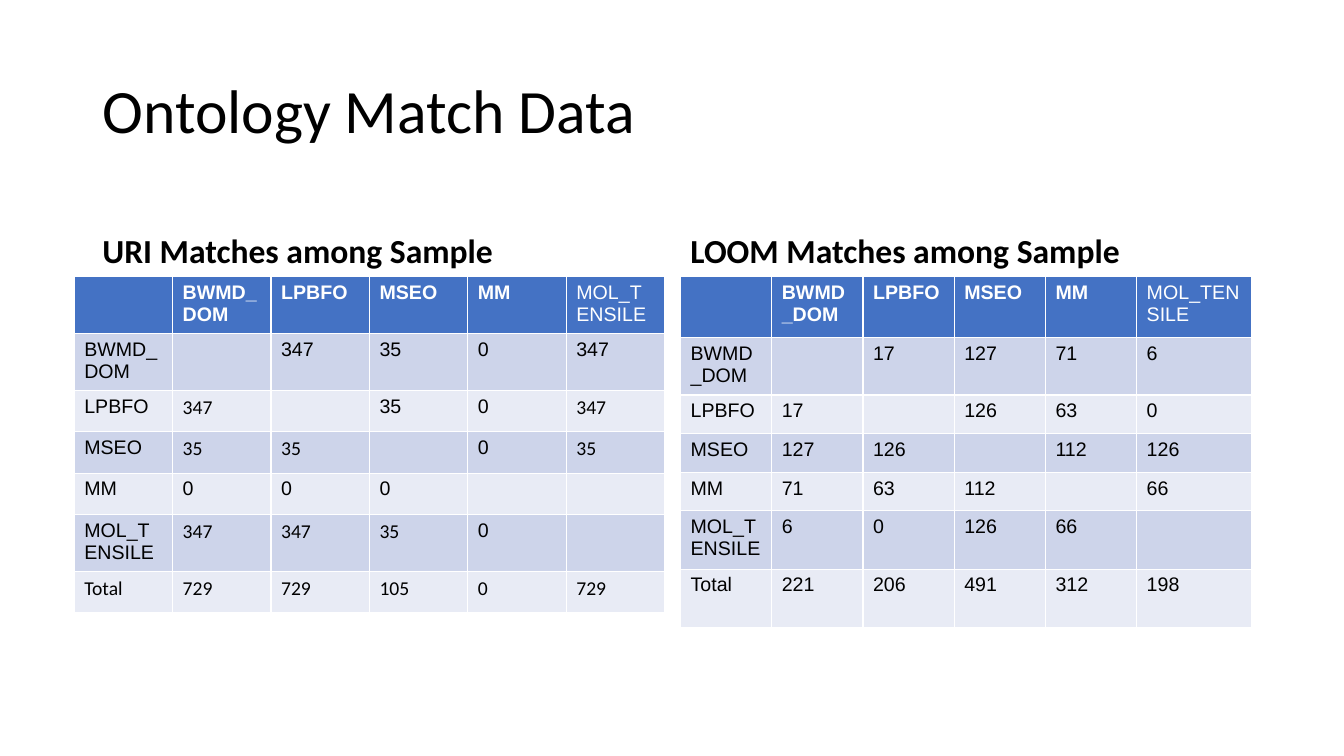
from pptx import Presentation
from pptx.dml.color import RGBColor
from pptx.enum.text import MSO_ANCHOR, PP_ALIGN
from pptx.util import Cm, Pt

BLACK, WHITE = "000000", "FFFFFF"
HEADER_FILL, BAND_FILLS = "4472C4", ("E8EBF5", "CDD4EA")
TABLE_TOP = 6.96
ONTOLOGIES = ["BWMD_DOM", "LPBFO", "MSEO", "MM", "MOL_TENSILE"]

URI_MATCHES = [
    ["", "347", "35", "0", "347"],
    ["347", "", "35", "0", "347"],
    ["35", "35", "", "0", "35"],
    ["0", "0", "0", "", ""],
    ["347", "347", "35", "0", ""],
    ["729", "729", "105", "0", "729"],
]
LOOM_MATCHES = [
    ["", "17", "127", "71", "6"],
    ["17", "", "126", "63", "0"],
    ["127", "126", "", "112", "126"],
    ["71", "63", "112", "", "66"],
    ["6", "0", "126", "66", ""],
    ["221", "206", "491", "312", "198"],
]
# (row, column) of the URI cells set in Calibri
URI_CALIBRI = {(2, 1), (2, 5), (3, 1), (3, 2), (3, 5), (5, 1), (5, 2), (5, 3)}
URI_CALIBRI |= {(6, column) for column in range(6)}


def color(hex_string):
    return RGBColor.from_string(hex_string)


def write(frame, text, hex_color=BLACK, **font_values):
    para = frame.paragraphs[0]
    span = para.add_run()
    span.text = text
    for name, value in font_values.items():
        setattr(span.font, name, value)
    span.font.color.rgb = color(hex_color)
    return para


def fill_text_box(box, left, top, width, height, text, anchor, **font_values):
    """Place a title or text box and write its single left-aligned line."""
    box.left, box.top, box.width, box.height = map(Cm, (left, top, width, height))
    frame = box.text_frame
    frame.word_wrap = True
    frame.vertical_anchor = anchor
    para = write(frame, text, name="Calibri", **font_values)
    para.alignment = PP_ALIGN.LEFT
    para.line_spacing = 0.9


def add_subheading(page, left, width, text):
    box = page.shapes.add_textbox(0, 0, 0, 0)
    fill_text_box(box, left, 4.67, width, 2.29, text, MSO_ANCHOR.BOTTOM,
                  size=Pt(24), bold=True)


def format_cell(cell, text, row, column, font_name):
    is_header = row == 0
    cell.fill.solid()
    cell.fill.fore_color.rgb = color(HEADER_FILL if is_header else BAND_FILLS[row % 2])
    if text:
        write(cell.text_frame, text, WHITE if is_header else BLACK, name=font_name,
              size=Pt(14), bold=is_header and column < len(ONTOLOGIES))
    else:
        end = cell.text_frame.paragraphs[0]._p.get_or_add_endParaRPr()
        end.set("sz", "1400")


def add_match_table(page, left, column_widths, row_heights, matches, calibri=frozenset()):
    labels = ONTOLOGIES + ["Total"]
    rows = [[""] + ONTOLOGIES] + [[label] + values for label, values in zip(labels, matches)]
    table = page.shapes.add_table(
        len(rows), len(column_widths), Cm(left), Cm(TABLE_TOP),
        Cm(sum(column_widths)), Cm(sum(row_heights))).table
    for column, width in zip(table.columns, column_widths):
        column.width = Cm(width)
    for row, height in zip(table.rows, row_heights):
        row.height = Cm(height)
    for row, values in enumerate(rows):
        for column, text in enumerate(values):
            font_name = "Calibri" if (row, column) in calibri else "Arial"
            format_cell(table.cell(row, column), text, row, column, font_name)


def main():
    deck = Presentation()
    deck.slide_width, deck.slide_height = Cm(33.87), Cm(19.05)
    page = deck.slides.add_slide(deck.slide_layouts[5])
    fill_text_box(page.shapes.title, 2.33, 1.01, 29.21, 3.68, "Ontology Match Data",
                  MSO_ANCHOR.MIDDLE, size=Pt(44))
    add_subheading(page, 2.33, 14.33, "URI Matches among Sample")
    add_match_table(page, 1.87, [2.48] * 6, [1.34, 1.36, 1.04, 1.04, 1.04, 1.36, 1.04],
                    URI_MATCHES, URI_CALIBRI)
    add_subheading(page, 17.15, 14.4, "LOOM Matches among Sample")
    add_match_table(page, 17.15, [2.3] * 5 + [2.9],
                    [1.55, 1.36, 0.98, 0.97, 0.97, 1.47, 1.47], LOOM_MATCHES)
    deck.save("out.pptx")


if __name__ == "__main__":
    main()
